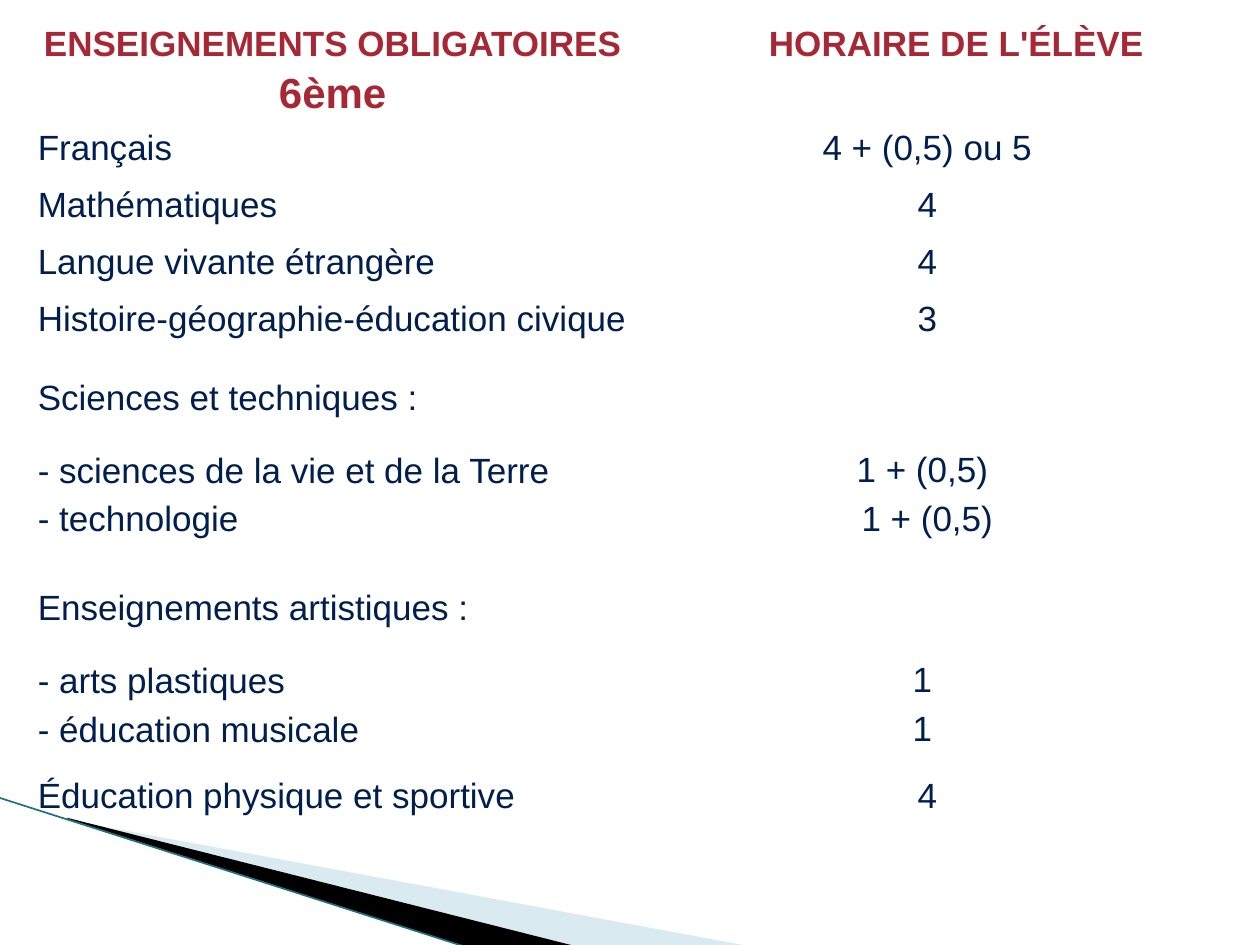
"""Build the slide listing compulsory 6ème subjects and weekly hours."""
import pptx
import pptx.dml.color
import pptx.enum.shapes
import pptx.enum.text
import pptx.oxml.ns
import pptx.util
from lxml import etree

Inches = pptx.util.Inches
Pt = pptx.util.Pt
RGBColor = pptx.dml.color.RGBColor
qn = pptx.oxml.ns.qn
PP_ALIGN = pptx.enum.text.PP_ALIGN

RED = RGBColor(0xA7, 0x27, 0x35)
NAVY = RGBColor(0x00, 0x1F, 0x4E)
PALE_BLUE = RGBColor(0xA0, 0xCB, 0xDC)
TEAL = RGBColor(0x1F, 0x6F, 0x85)
BLACK = RGBColor(0x00, 0x00, 0x00)

NO_STYLE = "{2D5ABB26-0587-4C30-8999-92F81FD0307C}"
PAD = 0.02
ROW = 0.45
GROUP_ROW = 1.67
GROUP_TOP = 0.2
GROUP_HOURS_TOP = 0.77
HEADING_GAP = 15.9
ITEM_GAP = 2.2

SUBJECTS = [
    ("Français", "4 + (0,5) ou 5"),
    ("Mathématiques", "4"),
    ("Langue vivante étrangère", "4"),
    ("Histoire-géographie-éducation civique", "3"),
]
GROUPS = [
    (["Sciences et techniques :", "- sciences de la vie et de la Terre", "- technologie"],
     ["1 + (0,5) ", "1 + (0,5)"]),
    (["Enseignements artistiques :", "- arts plastiques", "- éducation musicale"],
     ["1 ", "1 "]),
]


class Deck:
    """Hold the text style and the current slide."""

    font = "Arial"
    size = 20
    spacing = 1.15

    def __init__(self, prs):
        self.s = prs.slides.add_slide(prs.slide_layouts[6])

    def polygon(self, points, color, alpha=None):
        """Draw a filled outline without a border."""
        start, *rest = [(Inches(x), Inches(y)) for x, y in points]
        fb = self.s.shapes.build_freeform(*start)
        fb.add_line_segments(rest, close=True)
        sp = fb.convert_to_shape()
        sp.shadow.inherit = False
        sp.fill.solid()
        sp.fill.fore_color.rgb = color
        sp.line.fill.background()
        if alpha is not None:
            clr = sp._element.spPr.find(".//" + qn("a:srgbClr"))
            etree.SubElement(clr, qn("a:alpha"), val=str(alpha * 1000))

    def line(self, start, end, color, width):
        """Draw a straight line."""
        ends = [Inches(v) for v in (*start, *end)]
        c = self.s.shapes.add_connector(pptx.enum.shapes.MSO_CONNECTOR.STRAIGHT, *ends)
        c.line.color.rgb = color
        c.line.width = Pt(width)
        etree.SubElement(c._element.spPr, qn("a:effectLst"))

    def table(self, left, top, widths, heights):
        """Add a plain table without fills or borders."""
        frame = self.s.shapes.add_table(
            len(heights), len(widths), Inches(left), Inches(top),
            Inches(sum(widths)), Inches(sum(heights)))
        t = frame.table
        t.first_row = t.horz_banding = False
        t._tbl.tblPr.find(qn("a:tableStyleId")).text = NO_STYLE
        for col, w in zip(t.columns, widths):
            col.width = Inches(w)
        for row, h in zip(t.rows, heights):
            row.height = Inches(h)
        return t

    def cell(self, cell, lines, align=PP_ALIGN.LEFT, color=NAVY, bold=False,
             left=PAD, top=PAD, gaps=()):
        """Fill a cell with one paragraph per line."""
        cell.fill.background()
        cell.margin_left, cell.margin_top = Inches(left), Inches(top)
        cell.margin_right = cell.margin_bottom = Inches(PAD)
        tf = cell.text_frame
        for i, text in enumerate(lines):
            p = tf.add_paragraph() if i else tf.paragraphs[0]
            p.alignment = align
            p.line_spacing = self.spacing
            if i:
                p.space_before = Pt(gaps[i - 1])
            p.font.name, p.font.size = self.font, Pt(self.size)
            p.font.bold, p.font.color.rgb = bold, color
            r = p.add_run()
            r.text = text
        return tf


def main():
    """Assemble and save the slide."""
    prs = pptx.Presentation()
    prs.slide_width, prs.slide_height = Inches(10), Inches(7.5)
    deck = Deck(prs)
    deck.polygon([(0.55, 6.51), (5.95, 7.51), (4.56, 7.51), (0.55, 6.5)], PALE_BLUE, 40)
    deck.polygon([(0.53, 6.49), (4.57, 7.51), (3.72, 7.52), (0.54, 6.5)], BLACK)
    deck.line((-0.01, 6.33), (3.71, 7.52), TEAL, 0.95)

    heights = [0.83] + [ROW] * len(SUBJECTS) + [GROUP_ROW] * len(GROUPS) + [ROW]
    t = deck.table(0.28, 0.13, [4.72, 4.72], heights)
    center = PP_ALIGN.CENTER
    tf = deck.cell(t.cell(0, 0), ["ENSEIGNEMENTS OBLIGATOIRES "], center, RED, True)
    r = tf.paragraphs[0].add_run()
    r.text = "6ème"
    r.font.size = Pt(24)
    deck.cell(t.cell(0, 1), ["HORAIRE DE L'ÉLÈVE"], center, RED, True, left=0.48)

    for row, (subject, hours) in enumerate(SUBJECTS, 1):
        deck.cell(t.cell(row, 0), [subject])
        deck.cell(t.cell(row, 1), [hours], center)
    for row, (subjects, hours) in enumerate(GROUPS, 1 + len(SUBJECTS)):
        deck.cell(t.cell(row, 0), subjects, top=GROUP_TOP, gaps=(HEADING_GAP, ITEM_GAP))
        deck.cell(t.cell(row, 1), hours, center, top=GROUP_HOURS_TOP, gaps=(ITEM_GAP,))
    last = len(heights) - 1
    deck.cell(t.cell(last, 0), ["Éducation physique et sportive"])
    deck.cell(t.cell(last, 1), ["4"], center)
    prs.save("out.pptx")


if __name__ == "__main__":
    main()
